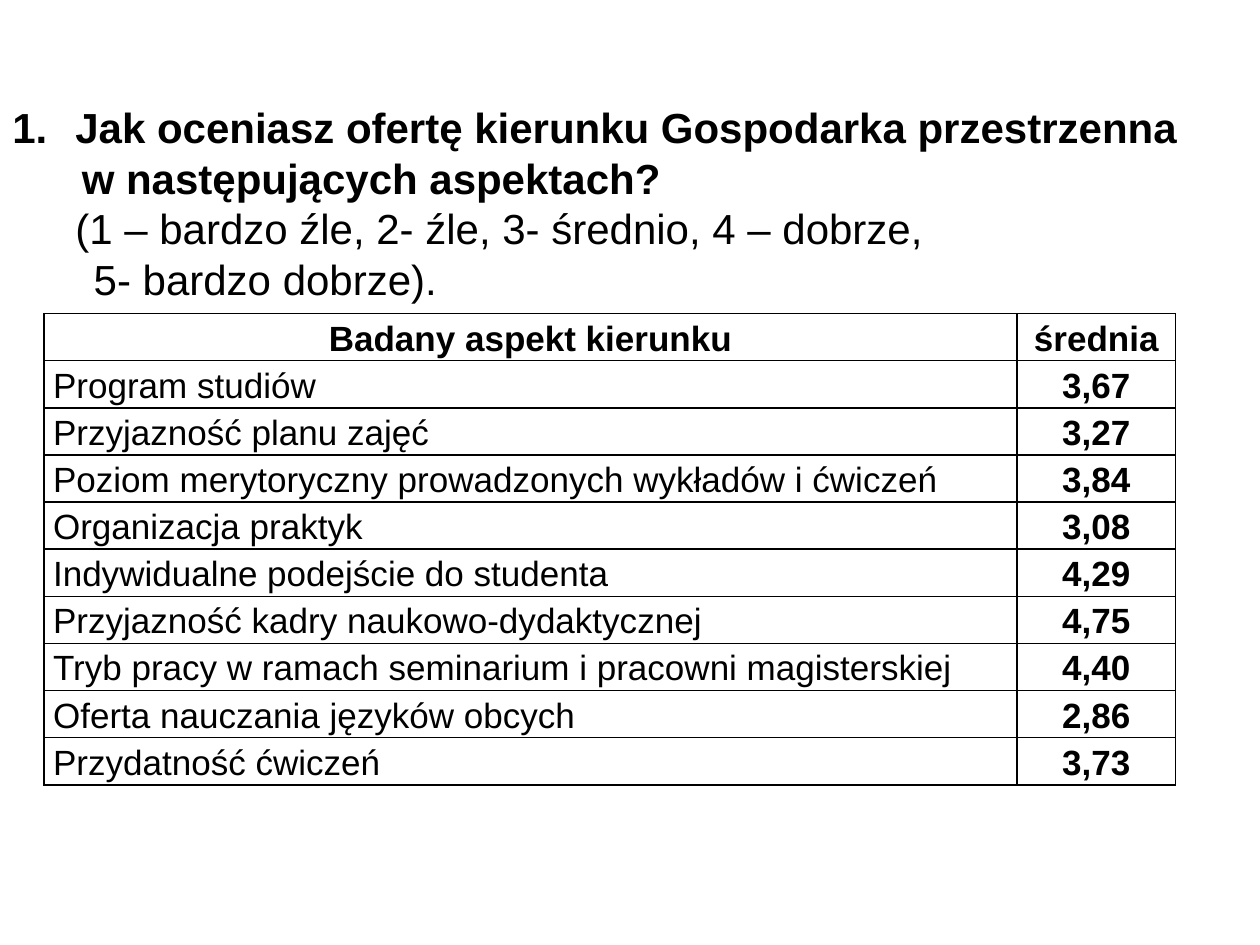
from lxml import etree
from pptx import Presentation
from pptx.dml.color import RGBColor
from pptx.enum.text import MSO_ANCHOR, PP_ALIGN as Align
from pptx.oxml.ns import qn
from pptx.util import Cm, Pt

BLACK = RGBColor(0, 0, 0)

HEADER = ("Badany aspekt kierunku", "średnia")
RATINGS = [
    ("Program studiów", "3,67"),
    ("Przyjazność planu zajęć", "3,27"),
    ("Poziom merytoryczny prowadzonych wykładów i ćwiczeń", "3,84"),
    ("Organizacja praktyk", "3,08"),
    ("Indywidualne podejście do studenta", "4,29"),
    ("Przyjazność kadry naukowo-dydaktycznej", "4,75"),
    ("Tryb pracy w ramach seminarium i pracowni magisterskiej", "4,40"),
    ("Oferta nauczania języków obcych", "2,86"),
    ("Przydatność ćwiczeń", "3,73"),
]


class SlideBuilder:
    """Holds the style and the slide being filled."""

    font_name = "Arial"
    question_size = Pt(24)
    table_size = Pt(20)
    text_indent = Cm(1.27)

    def __init__(self, slide):
        self.slide = slide

    def add_run(self, paragraph, text, size, bold=False):
        run = paragraph.add_run()
        run.text = text
        run.font.name = self.font_name
        run.font.size = size
        run.font.bold = bold
        run.font.color.rgb = BLACK

    def set_indent(self, paragraph, first_line, numbered=False):
        properties = paragraph._p.get_or_add_pPr()
        properties.set("marL", str(self.text_indent))
        properties.set("indent", str(first_line))
        if numbered:
            etree.SubElement(properties, qn("a:buFont"), typeface=self.font_name)
            etree.SubElement(properties, qn("a:buAutoNum"), type="arabicPeriod")
        else:
            etree.SubElement(properties, qn("a:buNone"))

    def add_question(self, left, top, width, height, paragraphs):
        """Each paragraph is (first-line indent, numbered, [(line, bold), ...])."""
        frame = self.slide.shapes.add_textbox(left, top, width, height).text_frame
        frame.word_wrap = True
        frame.vertical_anchor = MSO_ANCHOR.MIDDLE
        for index, (first_line, numbered, lines) in enumerate(paragraphs):
            paragraph = frame.add_paragraph() if index else frame.paragraphs[0]
            self.set_indent(paragraph, first_line, numbered)
            for number, (text, bold) in enumerate(lines):
                if number:
                    paragraph.add_line_break()
                self.add_run(paragraph, text, self.question_size, bold)

    def set_borders(self, cell):
        properties = cell._tc.get_or_add_tcPr()
        for position, side in enumerate(("lnL", "lnR", "lnT", "lnB")):
            line = etree.Element(qn(f"a:{side}"), w=str(Pt(1)))
            fill = etree.SubElement(line, qn("a:solidFill"))
            etree.SubElement(fill, qn("a:srgbClr"), val=str(BLACK))
            properties.insert(position, line)

    def fill_cell(self, cell, text, bold, alignment):
        cell.margin_left = cell.margin_right = Cm(0.18)
        cell.margin_top = cell.margin_bottom = 0
        cell.fill.background()
        self.set_borders(cell)
        paragraph = cell.text_frame.paragraphs[0]
        paragraph.alignment = alignment
        paragraph.line_spacing = 1.15
        self.add_run(paragraph, text, self.table_size, bold)

    def add_table(self, left, top, column_widths, row_height, rows):
        table = self.slide.shapes.add_table(
            len(rows), len(column_widths), left, top,
            sum(column_widths), row_height * len(rows)).table
        table.first_row = table.horz_banding = False
        for column, width in zip(table.columns, column_widths):
            column.width = width
        for row_index, row in enumerate(rows):
            for column_index, text in enumerate(row):
                strong = row_index == 0 or column_index == 1
                self.fill_cell(table.cell(row_index, column_index), text, strong,
                               Align.CENTER if strong else Align.LEFT)


def main():
    presentation = Presentation()
    presentation.slide_width, presentation.slide_height = Cm(25.4), Cm(19.05)
    builder = SlideBuilder(presentation.slides.add_slide(presentation.slide_layouts[6]))

    # Ratings table
    builder.add_table(Cm(0.89), Cm(6.32), (Cm(19.61), Cm(3.2)), Cm(0.95),
                      [HEADER, *RATINGS])

    # Survey question with its scale
    builder.add_question(Cm(0), Cm(1.9), Cm(25.9), Cm(4.37), [
        (Cm(-1.27), True,
         [("Jak oceniasz ofertę kierunku Gospodarka przestrzenna", True)]),
        (Cm(0.13), False,
         [("w następujących aspektach?", True),
          ("(1 – bardzo źle, 2- źle, 3- średnio, 4 – dobrze,", False)]),
        (Cm(0.37), False, [("5- bardzo dobrze).", False)]),
    ])

    presentation.save("out.pptx")


if __name__ == "__main__":
    main()
